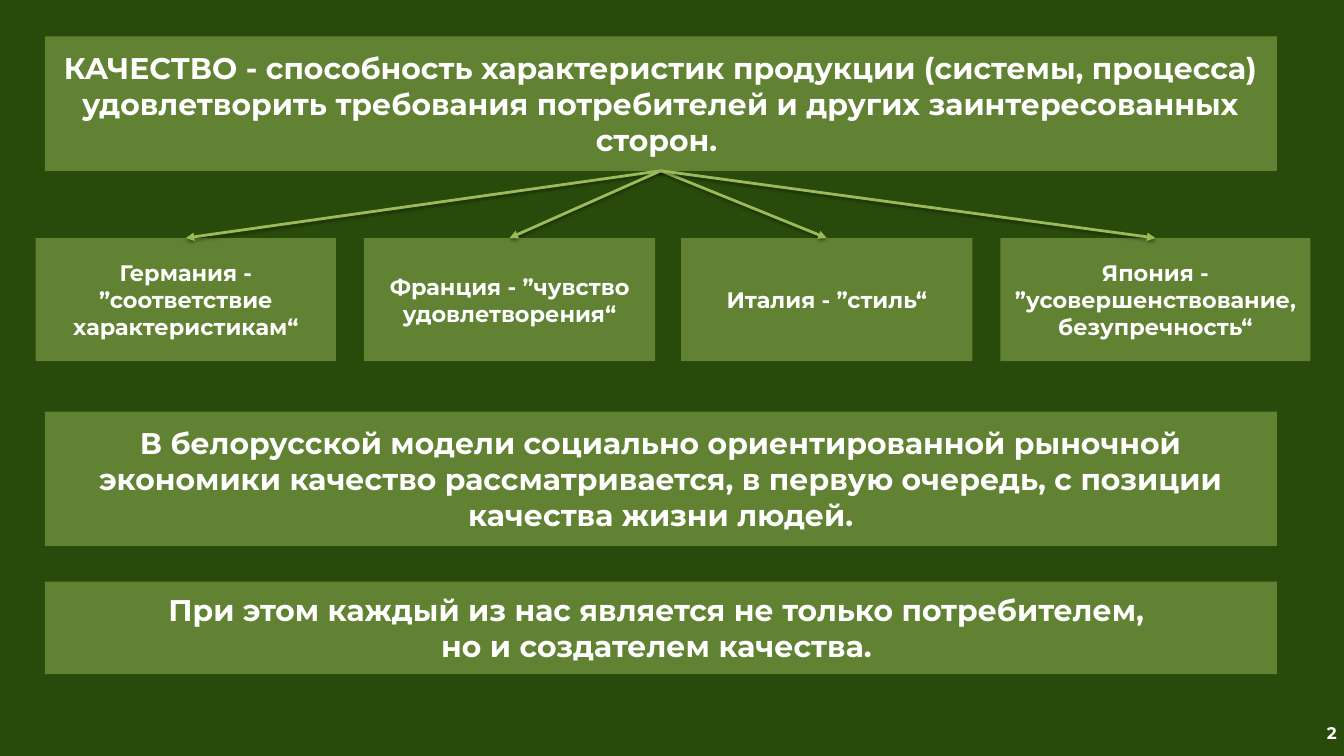
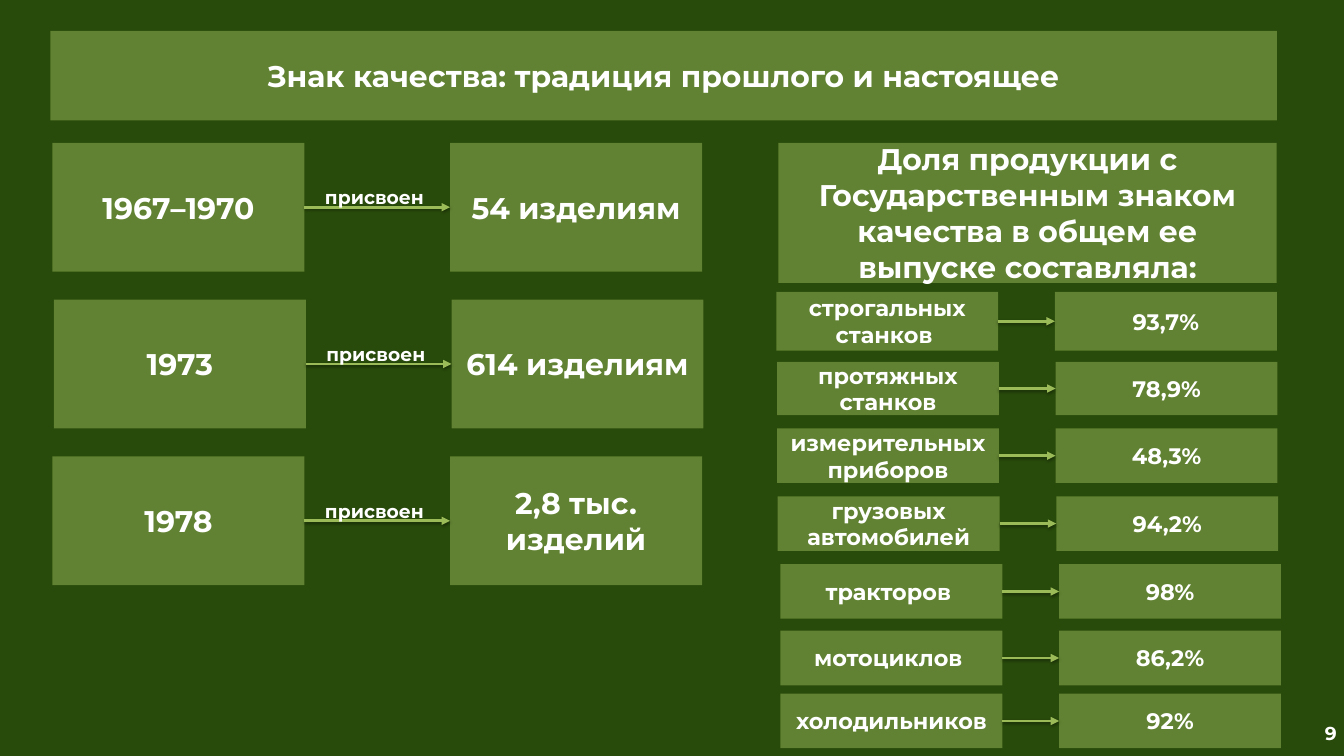
from lxml import etree
from pptx import Presentation
from pptx.dml.color import RGBColor
from pptx.enum.shapes import MSO_CONNECTOR, MSO_SHAPE
from pptx.enum.text import MSO_ANCHOR, MSO_AUTO_SIZE, PP_ALIGN
from pptx.oxml.ns import qn
from pptx.util import Pt

RECTANGLE = MSO_SHAPE.RECTANGLE
STRAIGHT = MSO_CONNECTOR.STRAIGHT
CENTER, RIGHT = PP_ALIGN.CENTER, PP_ALIGN.RIGHT
MIDDLE, TOP = MSO_ANCHOR.MIDDLE, MSO_ANCHOR.TOP
SIDE_TOP, SIDE_LEFT, SIDE_BOTTOM, SIDE_RIGHT = range(4)

# Shared look
PX = 9525  # EMU in one px, page of 1920 x 1080
FONT = "Montserrat"
DARK, GREEN, WHITE = "284A0B", "9BBB59", "FFFFFF"
LARGE, MEDIUM, SMALL, TINY = 32, 24, 20, 18

# Content of the definition slide: boxes are left, top, width, height
DEFINITION = ("КАЧЕСТВО - способность характеристик продукции (системы, процесса) "
              "удовлетворить требования потребителей и других заинтересованных сторон. ")
DEFINITION_AREA = (64, 52, 1760, 192)
COUNTRIES = [  # left, width, text
    (51, 429, "Германия - ”соответствие характеристикам“"),
    (520, 416, "Франция - ”чувство удовлетворения“"),
    (973, 416, "Италия - ”стиль“"),
    (1429, 443, "Япония - ”усовершенствование, безупречность“"),
]
COUNTRY_TOP, COUNTRY_HEIGHT = 340, 176
CONCLUSIONS = [  # top, height, text
    (588, 192, "В белорусской модели социально ориентированной рыночной экономики "
               "качество рассматривается, в первую очередь, с позиции качества жизни людей."),
    (831, 132, "При этом каждый из нас является не только потребителем, \n"
               "но и создателем качества. "),
]

# Content of the quality mark slide
MARK_TITLE = "Знак качества: традиция прошлого и настоящее"
MARK_TITLE_AREA = (72, 44, 1752, 128)
AWARD_LABEL = "присвоен"
AWARDS = [  # left, period, products
    (75, "1967–1970", "54 изделиям"),
    (77, "1973", "614 изделиям"),
    (75, "1978", "2,8 тыс. изделий"),
]
AWARD_TOP, AWARD_STEP, AWARD_WIDTH, AWARD_HEIGHT = 204, 224, 360, 184
AWARD_SHIFT = 568  # from period box to product box
SHARE_TITLE = "Доля продукции с Государственным знаком качества в общем ее выпуске составляла:"
SHARE_TITLE_AREA = (1112, 204, 712, 200)
SHARES = [  # left, top, height, product, share
    (1109, 417, 84, "строгальных станков ", "93,7%"),
    (1110, 517, 76, "протяжных станков", "78,9%"),
    (1110, 612, 78, "измерительных приборов", "48,3%"),
    (1111, 709, 78, "грузовых автомобилей", "94,2%"),
    (1115, 806, 78, "тракторов ", "98%"),
    (1115, 901, 78, "мотоциклов ", "86,2%"),
    (1115, 991, 78, "холодильников", "92%"),
]
SHARE_WIDTH, SHARE_SHIFT = 317, 398


def color(value):
    return RGBColor.from_string(value)


def scaled(area):
    return [length * PX for length in area]


def write(box, text, size, align=CENTER, anchor=MIDDLE):
    frame = box.text_frame
    frame.word_wrap = True
    frame.auto_size = MSO_AUTO_SIZE.NONE
    frame.vertical_anchor = anchor
    para = frame.paragraphs[0]
    para.alignment = align
    for number, line in enumerate(text.split("\n")):
        if number:
            para.add_line_break()
        span = para.add_run()
        span.text = line
        span.font.name = FONT
        span.font.size = Pt(size)
        span.font.bold = True
        span.font.color.rgb = color(WHITE)


def paint(box):
    """Half transparent green without outline."""
    box.fill.solid()
    box.fill.fore_color.rgb = color(GREEN)
    tint = box._element.spPr.find(".//" + qn("a:srgbClr"))
    etree.SubElement(tint, qn("a:alpha"), val="50000")
    box.line.fill.background()


def add_panel(page, area, text, size):
    box = page.shapes.add_shape(RECTANGLE, *scaled(area))
    box.shadow.inherit = False
    paint(box)
    write(box, text, size)
    return box


def add_label(page, area, text, size, align=CENTER, anchor=TOP):
    write(page.shapes.add_textbox(*scaled(area)), text, size, align, anchor)


def add_arrow(page, source, source_side, target, target_side):
    arrow = page.shapes.add_connector(STRAIGHT, 0, 0, 0, 0)
    arrow.begin_connect(source, source_side)
    arrow.end_connect(target, target_side)
    arrow.line.color.rgb = color(GREEN)
    arrow.line.width = Pt(3)
    etree.SubElement(arrow.line._get_or_add_ln(), qn("a:tailEnd"), type="triangle")
    effects = etree.SubElement(arrow._element.spPr, qn("a:effectLst"))
    shadow = etree.SubElement(effects, qn("a:outerShdw"), blurRad="40000",
                              dist="23000", dir="5400000", rotWithShape="0")
    black = etree.SubElement(shadow, qn("a:srgbClr"), val="000000")
    etree.SubElement(black, qn("a:alpha"), val="35000")


def add_page(deck, title, area, number, number_size):
    """Page with a title band and its number in the corner."""
    page = deck.slides.add_slide(deck.slide_layouts[5])
    band = page.shapes.title
    band.left, band.top, band.width, band.height = scaled(area)
    paint(band)
    write(band, title, LARGE)
    add_label(page, (1695, 1028, 224, 38), number, number_size, RIGHT, MIDDLE)
    return page


def build_definition(deck):
    page = add_page(deck, DEFINITION, DEFINITION_AREA, "2", TINY)
    for left, width, text in COUNTRIES:
        country = add_panel(page, (left, COUNTRY_TOP, width, COUNTRY_HEIGHT), text, MEDIUM)
        add_arrow(page, page.shapes.title, SIDE_BOTTOM, country, SIDE_TOP)
    left, _, width, _ = DEFINITION_AREA
    for top, height, text in CONCLUSIONS:
        add_panel(page, (left, top, width, height), text, LARGE)


def add_pair(page, area, shift, texts, size):
    """Two equal boxes joined by an arrow."""
    left, top, width, height = area
    first, second = [add_panel(page, (left + shift * column, top, width, height), text, size)
                     for column, text in enumerate(texts)]
    add_arrow(page, first, SIDE_RIGHT, second, SIDE_LEFT)


def build_quality_mark(deck):
    page = add_page(deck, MARK_TITLE, MARK_TITLE_AREA, "9", SMALL)
    # Years and awarded products
    for row, (left, period, products) in enumerate(AWARDS):
        top = AWARD_TOP + row * AWARD_STEP
        add_pair(page, (left, top, AWARD_WIDTH, AWARD_HEIGHT), AWARD_SHIFT,
                 (period, products), LARGE)
        add_label(page, (left + 376, top + 57, 168, 42), AWARD_LABEL, SMALL)
    # Shares by product
    add_panel(page, SHARE_TITLE_AREA, SHARE_TITLE, LARGE)
    for left, top, height, product, share in SHARES:
        add_pair(page, (left, top, SHARE_WIDTH, height), SHARE_SHIFT,
                 (product, share), MEDIUM)


def main():
    deck = Presentation()
    deck.slide_width, deck.slide_height = scaled((1920, 1080))
    backdrop = deck.slide_master.background.fill
    backdrop.solid()
    backdrop.fore_color.rgb = color(DARK)
    build_definition(deck)
    build_quality_mark(deck)
    deck.save("out.pptx")


if __name__ == "__main__":
    main()
